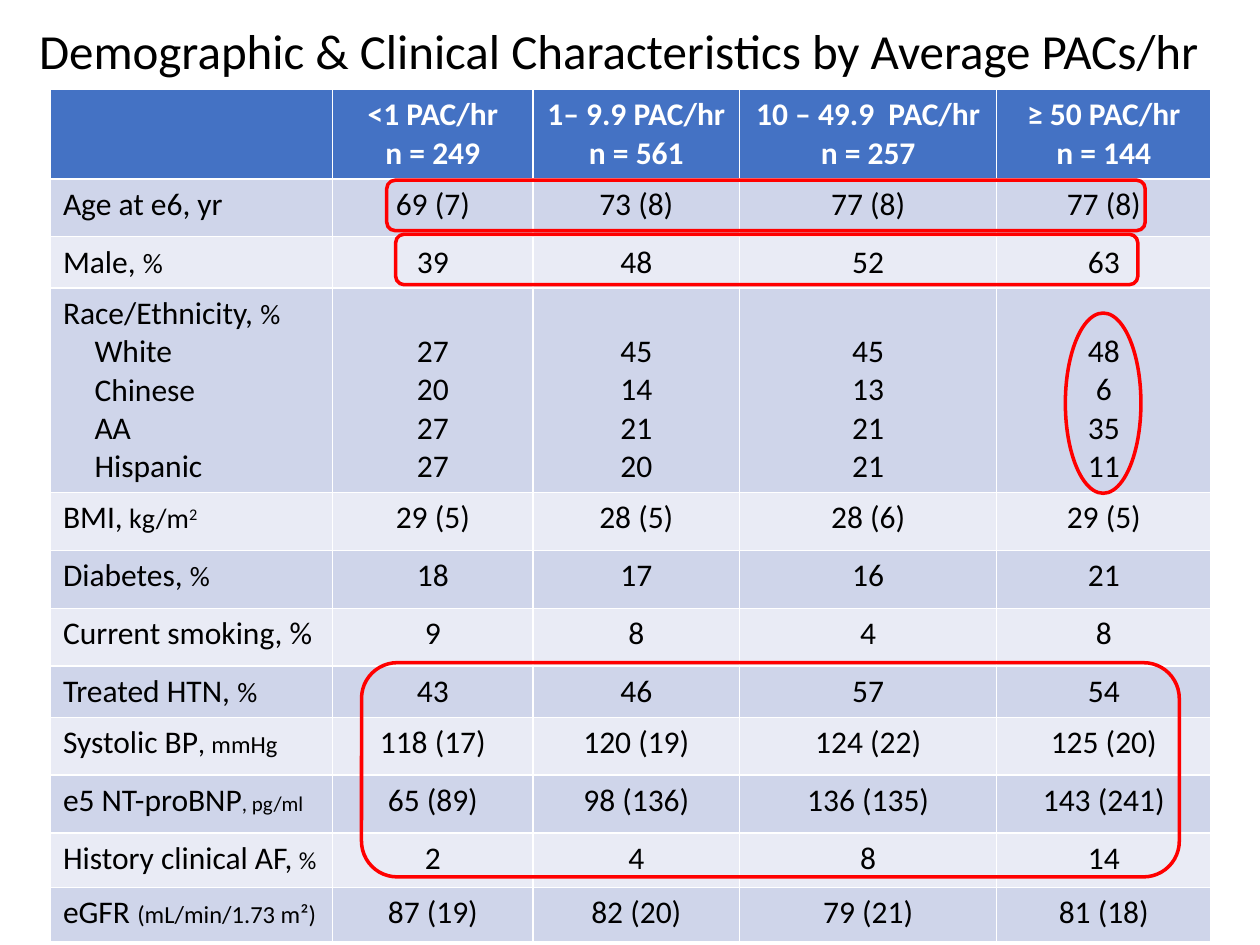
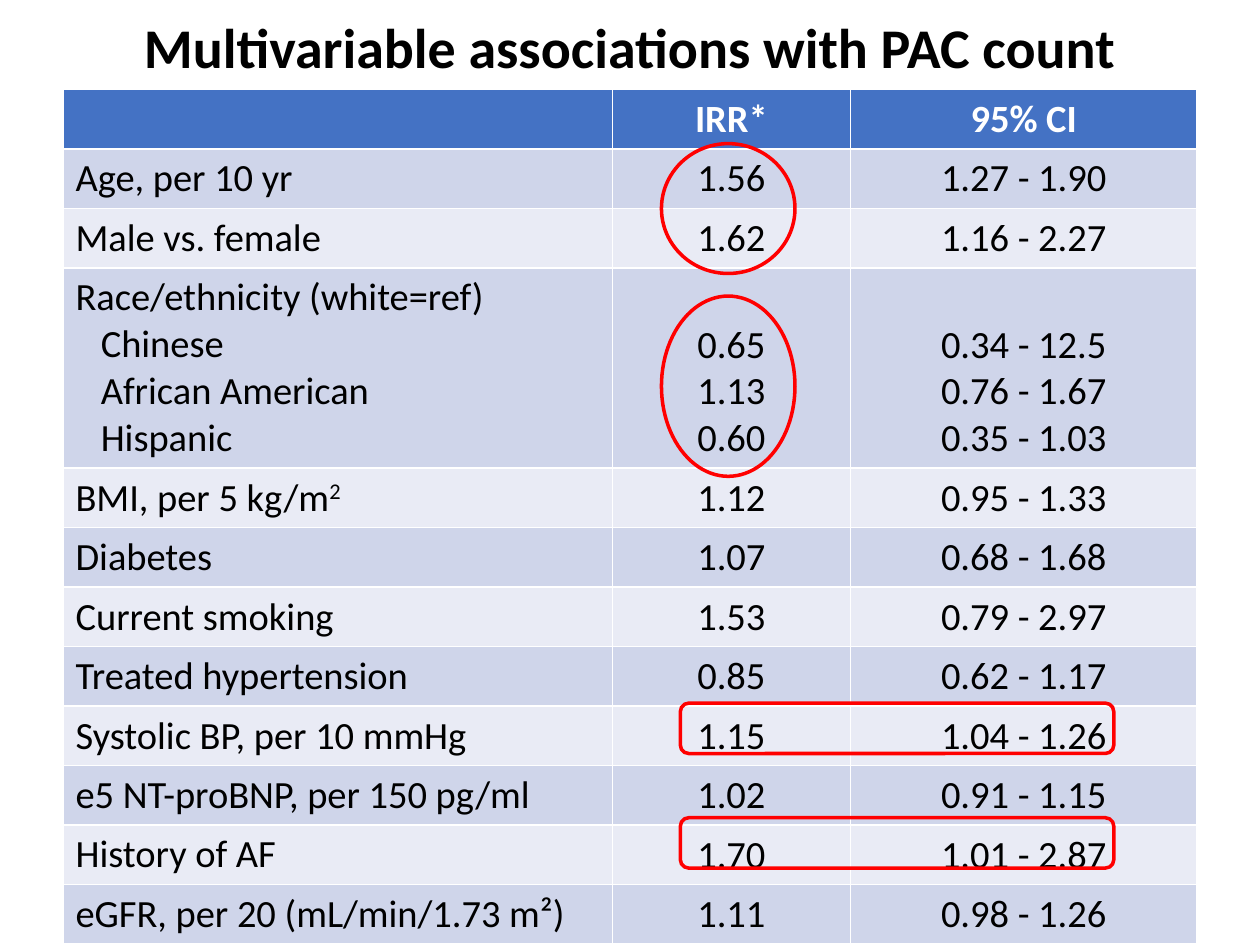
from dataclasses import dataclass, field

from pptx import Presentation
from pptx.dml.color import RGBColor
from pptx.enum.shapes import MSO_SHAPE
from pptx.enum.text import MSO_ANCHOR, PP_ALIGN
from pptx.util import Pt

FONT = "Calibri"
COLOURS = {
    "text": "000000",
    "header": "4472C4",
    "header_text": "FFFFFF",
    "odd_row": "CFD5EA",
    "even_row": "E9EBF5",
    "highlight": "FF0000",
}
SUPERSCRIPT = "30000"
BLANK_LAYOUT = 6
TABLE_TOP = 51.1


@dataclass
class Row:
    """Label spans are (text, size) or (text, size, baseline);
    a value is a string with one line per subgroup."""
    label: list
    values: list
    height: float
    subgroups: list = field(default_factory=list)


@dataclass
class TableStyle:
    size: int
    indent: float
    value_anchor: MSO_ANCHOR
    value_margin: float


def colour(name):
    return RGBColor.from_string(COLOURS[name])


def format_span(span, size, ink="text", bold=False, baseline=None):
    span.font.name = FONT
    span.font.size = Pt(size)
    span.font.bold = bold
    span.font.color.rgb = colour(ink)
    if baseline:
        span._r.get_or_add_rPr().set("baseline", baseline)


def write_centred(frame, text, size, ink="text", bold=False):
    frame.text = text
    for para in frame.paragraphs:
        para.alignment = PP_ALIGN.CENTER
        for span in para.runs:
            format_span(span, size, ink, bold)


def add_title(page, text, left, top, width, height, size, bold=False):
    box = page.shapes.add_textbox(Pt(left), Pt(top), Pt(width), Pt(height))
    frame = box.text_frame
    frame.word_wrap = True
    frame.vertical_anchor = MSO_ANCHOR.MIDDLE
    frame.margin_top = frame.margin_bottom = 0
    write_centred(frame, text, size, bold=bold)


def fill_cell(cell, name):
    cell.fill.solid()
    cell.fill.fore_color.rgb = colour(name)


def write_label(cell, row, style):
    frame = cell.text_frame
    for text, size, *baseline in row.label:
        span = frame.paragraphs[0].add_run()
        span.text = text
        format_span(span, size, baseline=baseline[0] if baseline else None)
    for subgroup in row.subgroups:
        para = frame.add_paragraph()
        para.text = subgroup
        para._p.get_or_add_pPr().set("marL", str(Pt(style.indent)))
        format_span(para.runs[0], style.size)


def write_value(cell, text, row, style):
    write_centred(cell.text_frame, text, style.size)
    if row.subgroups:  # lines up with the subgroups below the label
        cell.vertical_anchor = MSO_ANCHOR.BOTTOM
    else:
        cell.vertical_anchor = style.value_anchor
        cell.margin_top = cell.margin_bottom = Pt(style.value_margin)


def add_data_table(page, left, widths, header, header_height, rows, style):
    height = header_height + sum(row.height for row in rows)
    frame = page.shapes.add_table(len(rows) + 1, len(widths), Pt(left),
                                  Pt(TABLE_TOP), Pt(sum(widths)), Pt(height))
    table = frame.table
    for column, width in zip(table.columns, widths):
        column.width = Pt(width)

    # Header row
    table.rows[0].height = Pt(header_height)
    for index, text in enumerate([""] + header):
        cell = table.cell(0, index)
        fill_cell(cell, "header")
        write_centred(cell.text_frame, text, style.size, "header_text", True)

    # Body rows
    for number, row in enumerate(rows, start=1):
        table.rows[number].height = Pt(row.height)
        cells = list(table.rows[number].cells)
        for cell in cells:
            fill_cell(cell, "odd_row" if number % 2 else "even_row")
        write_label(cells[0], row, style)
        for cell, text in zip(cells[1:], row.values):
            write_value(cell, text, row, style)


def add_highlight(page, preset, left, top, width, height):
    shape = page.shapes.add_shape(preset, Pt(left), Pt(top), Pt(width), Pt(height))
    shape.shadow.inherit = False
    shape.fill.background()
    shape.line.color.rgb = colour("highlight")
    shape.line.width = Pt(2)


def build_characteristics(page):
    add_title(page, "Demographic & Clinical Characteristics by Average PACs/hr",
              0, 12.2, 707, 33.1, 28)
    tall, low, medium = 33.1, 29.2, 31
    header = ["<1 PAC/hr\nn = 249", "1– 9.9 PAC/hr\nn = 561",
              "10 – 49.9  PAC/hr\nn = 257", "≥ 50 PAC/hr\nn = 144"]
    rows = [
        Row([("Age at e6, yr", 18)], ["69 (7)", "73 (8)", "77 (8)", "77 (8)"], tall),
        Row([("Male, ", 18), ("%", 16)], ["39", "48", "52", "63"], low),
        Row([("Race/Ethnicity, ", 18), ("%", 16)],
            ["27\n20\n27\n27", "45\n14\n21\n20", "45\n13\n21\n21", "48\n6\n35\n11"],
            117, ["White", "Chinese", "AA", "Hispanic"]),
        Row([("BMI,", 18), (" kg/m", 16), ("2", 16, SUPERSCRIPT)],
            ["29 (5)", "28 (5)", "28 (6)", "29 (5)"], tall),
        Row([("Diabetes, ", 18), ("%", 16)], ["18", "17", "16", "21"], tall),
        Row([("Current smoking, %", 18)], ["9", "8", "4", "8"], tall),
        Row([("Treated HTN, ", 18), ("%", 16)], ["43", "46", "57", "54"], low),
        Row([("Systolic BP", 18), (", ", 16), ("mmHg", 14)],
            ["118 (17)", "120 (19)", "124 (22)", "125 (20)"], tall),
        Row([("e5 NT-proBNP", 18), (", pg/ml", 12)],
            ["65 (89)", "98 (136)", "136 (135)", "143 (241)"], tall),
        Row([("History clinical AF,", 18), (" ", 16), ("%", 14)],
            ["2", "4", "8", "14"], medium),
        Row([("eGFR ", 18), ("(mL/min/1.73 m²)", 14)],
            ["87 (19)", "82 (20)", "79 (21)", "81 (18)"], medium),
    ]
    style = TableStyle(18, 18, MSO_ANCHOR.TOP, 3.6)
    add_data_table(page, 28.8, [161.3, 114.5, 118.1, 146.9, 122.4],
                   header, 51.1, rows, style)

    # Race in the top group, risk factors, sex, age
    add_highlight(page, MSO_SHAPE.OVAL, 608.8, 178.9, 43.2, 103)
    for place in [(206.6, 378.7, 467.3, 122.4), (226.1, 133.9, 424.1, 28.8),
                  (221, 103, 433.4, 28.8)]:
        add_highlight(page, MSO_SHAPE.ROUNDED_RECTANGLE, *place)


def build_associations(page):
    add_title(page, "Multivariable associations with PAC count",
              36, 8.6, 648, 35.3, 32, bold=True)
    size, height = 22, 34
    simple = [
        ("Age, per 10 yr", "1.56", "1.27 - 1.90"),
        ("Male vs. female", "1.62", "1.16 - 2.27"),
        ("Diabetes", "1.07", "0.68 - 1.68"),
        ("Current smoking", "1.53", "0.79 - 2.97"),
        ("Treated hypertension", "0.85", "0.62 - 1.17"),
        ("Systolic BP, per 10 mmHg", "1.15", "1.04 - 1.26"),
        ("e5 NT-proBNP, per 150 pg/ml", "1.02", "0.91 - 1.15"),
        ("History of AF", "1.70", "1.01 - 2.87"),
        ("eGFR, per 20 (mL/min/1.73 m²)", "1.11", "0.98 - 1.26"),
    ]
    rows = [Row([(label, size)], values, height) for label, *values in simple]
    rows[2:2] = [
        Row([("Race/ethnicity (white=ref)", size)],
            ["0.65\n1.13\n0.60", "0.34 - 12.5\n0.76 - 1.67\n0.35 - 1.03"],
            114.5, ["Chinese", "African American", "Hispanic"]),
        Row([("BMI, per 5 kg/m", size), ("2", size, SUPERSCRIPT)],
            ["1.12", "0.95 - 1.33"], height),
    ]
    style = TableStyle(size, 14.4, MSO_ANCHOR.MIDDLE, 0.5)
    add_data_table(page, 36, [313.9, 136.1, 198], ["IRR*", "95% CI"],
                   height, rows, style)

    # Race, then age and sex
    for top, tall in [(169.2, 103), (82.1, 74.2)]:
        add_highlight(page, MSO_SHAPE.OVAL, 378, top, 76.3, tall)
    # Systolic BP and history of AF
    for top in (401.8, 467.3):
        add_highlight(page, MSO_SHAPE.ROUNDED_RECTANGLE, 388.8, top, 247.7, 28.8)


def main():
    deck = Presentation()
    deck.slide_width, deck.slide_height = Pt(720), Pt(540)
    for build in (build_characteristics, build_associations):
        build(deck.slides.add_slide(deck.slide_layouts[BLANK_LAYOUT]))
    deck.save("out.pptx")


if __name__ == "__main__":
    main()
